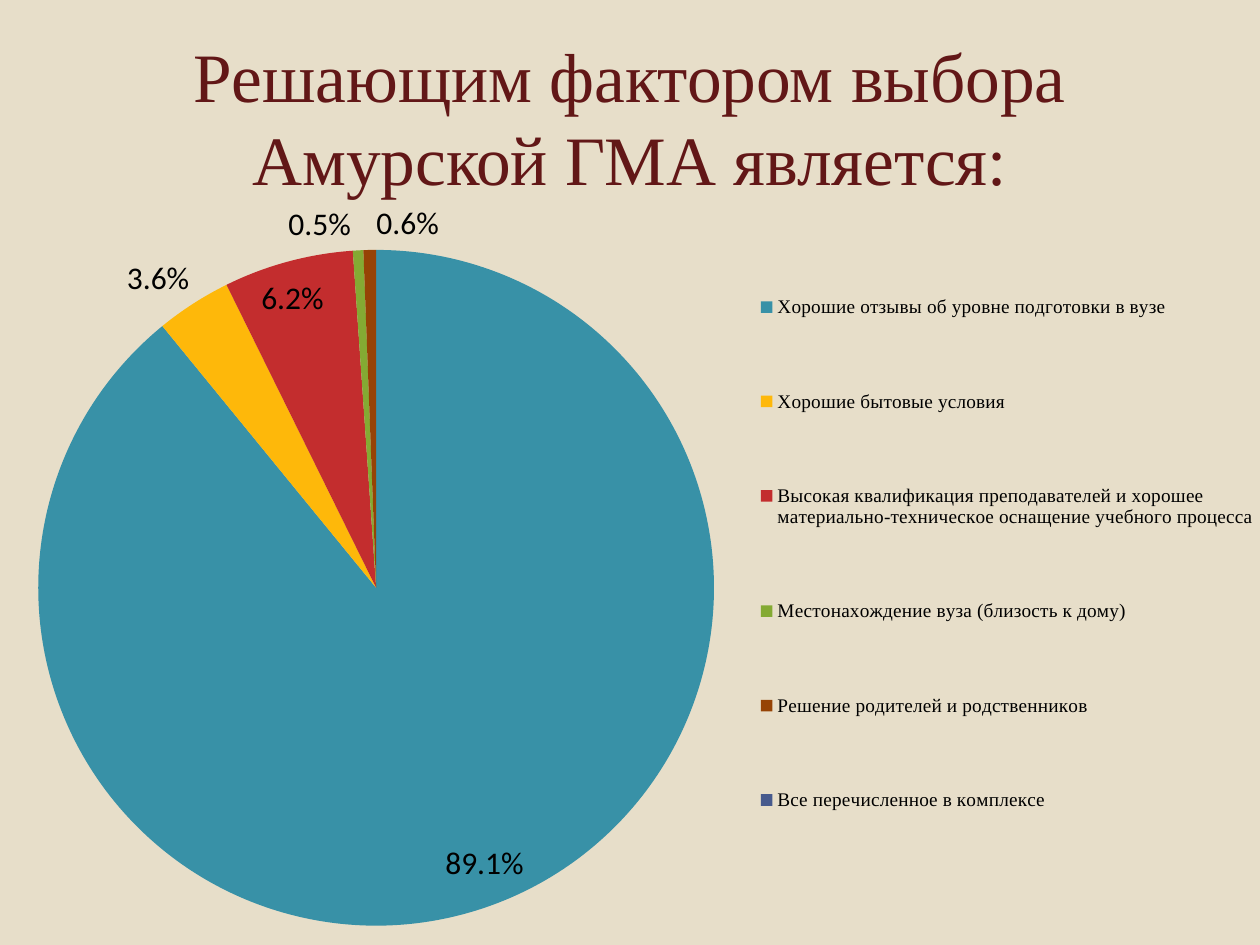
from lxml import etree
from pptx import Presentation
from pptx.chart.data import CategoryChartData
from pptx.dml.color import RGBColor
from pptx.enum import chart as kinds, text
from pptx.oxml import ns
from pptx.util import Pt

SAND = RGBColor(0xE7, 0xDE, 0xC9)
WINE = RGBColor(0x62, 0x17, 0x17)
BLACK = RGBColor(0, 0, 0)
SERIF = "Times New Roman"

TITLE = "Решающим фактором выбора Амурской ГМА является:"
FACTORS = [
    ("Хорошие отзывы об уровне подготовки в вузе", 89.1, RGBColor(0x38, 0x91, 0xA7)),
    ("Хорошие бытовые условия", 3.6, RGBColor(0xFE, 0xB8, 0x0A)),
    ("Высокая квалификация преподавателей и хорошее "
     "материально-техническое оснащение учебного процесса",
     6.2, RGBColor(0xC3, 0x2D, 0x2E)),
    ("Местонахождение вуза (близость к дому)", 0.5, RGBColor(0x84, 0xAA, 0x33)),
    ("Решение родителей и родственников", 0.6, RGBColor(0x96, 0x43, 0x05)),
    ("Все перечисленное в комплексе", 0, RGBColor(0x47, 0x5A, 0x8D)),
]
PIE = {"x": 0.03, "y": 0.08, "w": 0.53, "h": 0.9}
LEGEND = {"x": 0.59, "y": 0.05, "w": 0.4, "h": 0.87}


def style(font, size, name, color):
    font.size, font.name = Pt(size), name
    font.color.rgb = color


def write(slide, words, box, size, name, color):
    frame = slide.shapes.add_textbox(*map(Pt, box)).text_frame
    frame.word_wrap = True
    frame.vertical_anchor = text.MSO_ANCHOR.MIDDLE
    par = frame.paragraphs[0]
    par.alignment = text.PP_ALIGN.CENTER
    run = par.add_run()
    run.text = words
    style(run.font, size, name, color)


def node(parent, tag, val):
    etree.SubElement(parent, ns.qn("c:" + tag)).set("val", str(val))


def place(parent, index, area, inner=False):
    for old in parent.findall(ns.qn("c:layout")):
        parent.remove(old)
    layout = etree.Element(ns.qn("c:layout"))
    manual = etree.SubElement(layout, ns.qn("c:manualLayout"))
    if inner:
        node(manual, "layoutTarget", "inner")
    for axis in "xy":
        node(manual, axis + "Mode", "edge")
    for key, val in area.items():
        node(manual, key, val)
    parent.insert(index, layout)


def draw(slide, box):
    data = CategoryChartData()
    data.categories = [name for name, _, _ in FACTORS]
    data.add_series("Series 1", [val for _, val, _ in FACTORS])
    chart = slide.shapes.add_chart(
        kinds.XL_CHART_TYPE.PIE, *map(Pt, box), data).chart
    chart.has_title = False
    style(chart.font, 18, "Calibri", BLACK)
    plot = chart.plots[0]
    plot.vary_by_categories = True
    series = plot.series[0]
    labels = series.data_labels
    labels.show_value = False
    labels.show_percentage = True
    labels.number_format = "0.0%"
    labels.number_format_is_linked = False
    labels.position = kinds.XL_LABEL_POSITION.BEST_FIT
    root = chart.element
    group = root.find(".//" + ns.qn("c:dLbls"))
    for i, (_, val, color) in enumerate(FACTORS):
        fill = series.points[i].format.fill
        fill.solid()
        fill.fore_color.rgb = color
        if not val:
            label = etree.Element(ns.qn("c:dLbl"))
            node(label, "idx", i)
            node(label, "delete", 1)
            group.insert(0, label)
    chart.has_legend = True
    legend = chart.legend
    legend.position = kinds.XL_LEGEND_POSITION.RIGHT
    legend.include_in_layout = False
    style(legend.font, 11, SERIF, BLACK)
    place(root.find(".//" + ns.qn("c:plotArea")), 0, PIE, inner=True)
    place(root.find(".//" + ns.qn("c:legend")), 1, LEGEND)


def main():
    deck = Presentation()
    deck.slide_width, deck.slide_height = Pt(720), Pt(540)
    slide = deck.slides.add_slide(deck.slide_layouts[6])
    back = slide.background.fill
    back.solid()
    back.fore_color.rgb = SAND
    write(slide, TITLE, (36, 21.6, 648, 90), size=39.6, name=SERIF, color=WINE)
    draw(slide, (0, 105.84, 728.64, 434.16))
    deck.save("out.pptx")


if __name__ == "__main__":
    main()
